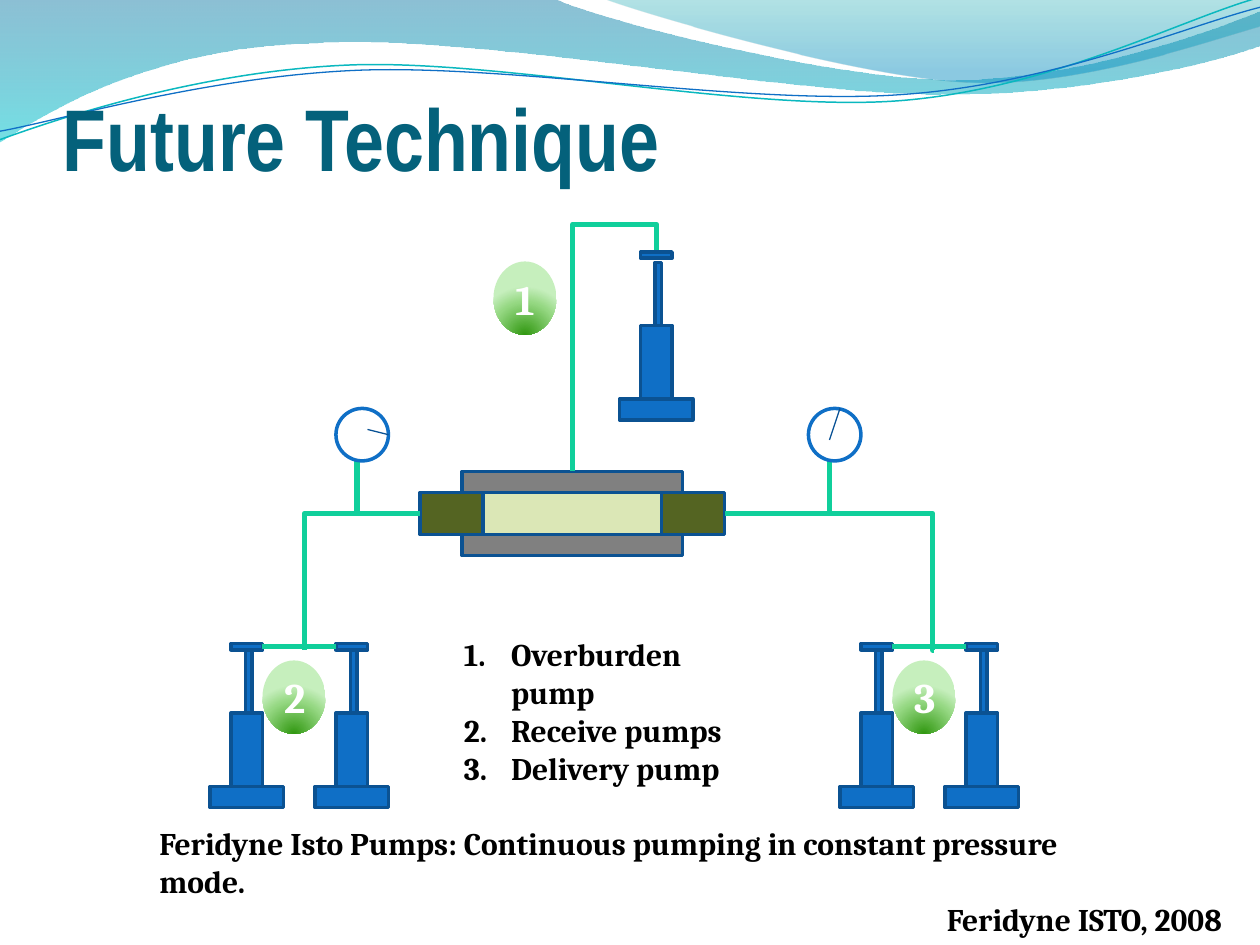
from dataclasses import dataclass
from typing import NamedTuple, Optional

from lxml.etree import SubElement
from pptx import Presentation
from pptx.dml.color import RGBColor
from pptx.enum.shapes import MSO_CONNECTOR as LineKind, MSO_SHAPE as Preset
from pptx.enum.text import MSO_ANCHOR as Anchor, MSO_AUTO_SIZE as AutoSize, PP_ALIGN as Align
from pptx.oxml.ns import qn
from pptx.util import Pt

PX = 7620  # EMU per px, 120 px to the inch
BLUE, NAVY, GREEN, WHITE = "0F6FC6", "0B5292", "10CF9B", "FFFFFF"
GREY, OLIVE, CORE = "808080", "546422", "DBE7B6"
BODY = {"name": "Cambria", "size": Pt(18), "bold": True}
HEADING = {"name": "Arial Narrow", "size": Pt(50), "bold": True}
BADGE = {"name": "Cambria", "size": Pt(24), "bold": True}


class Box(NamedTuple):
    left: int
    top: int
    width: int
    height: int

    def emu(self) -> list[int]:
        return [side * PX for side in self]


class Stop(NamedTuple):
    percent: int
    color: str
    alpha: int = 100


@dataclass
class Wave:
    start: tuple
    steps: list  # two numbers are a straight step, six a Bezier curve
    stops: Optional[list] = None
    line: Optional[tuple] = None


@dataclass
class Pump:
    left: int
    rod_top: int
    cap_gap: int = 0


@dataclass
class Elbow:
    box: Box
    preset: str
    turn: dict
    bend: Optional[int] = None


@dataclass
class Gauge:
    left: int
    tap: int
    needle: tuple


def rgb(color: str) -> RGBColor:
    return RGBColor.from_string(color)


def add(parent, tag: str, **attributes):
    return SubElement(parent, qn(tag), {key: str(value) for key, value in attributes.items()})


def set_line(shape, color: str, width: float) -> None:
    shape.line.color.rgb = rgb(color)
    shape.line.width = Pt(width)


def set_gradient(shape, stops: list[Stop], radial: bool = False) -> None:
    shape.fill.background()
    properties = shape._element.spPr
    gradient = add(properties, "a:gradFill", rotWithShape=1)
    properties.replace(properties.find(qn("a:noFill")), gradient)
    stop_list = add(gradient, "a:gsLst")
    for stop in stops:
        color = add(add(stop_list, "a:gs", pos=stop.percent * 1000), "a:srgbClr", val=stop.color)
        add(color, "a:alpha", val=stop.alpha * 1000)
    if radial:
        circle = add(gradient, "a:path", path="circle")
        add(circle, "a:fillToRect", l=50000, t=130000, r=50000, b=-30000)
    else:
        add(gradient, "a:lin", ang=5400000, scaled=1)


def draw_wave(shapes, wave: Wave) -> None:
    knots = [(step[n] * PX, step[n + 1] * PX) for step in wave.steps for n in range(0, len(step), 2)]
    builder = shapes.build_freeform(*(place * PX for place in wave.start), scale=1.0)
    builder.add_line_segments(knots, close=wave.stops is not None)
    shape = builder.convert_to_shape()

    # Join each three knots of a curved step into one Bezier segment
    outline = next(shape._element.iter(qn("a:path")))
    corners = iter(outline.findall(qn("a:lnTo")))
    for step in wave.steps:
        group = [next(corners) for _ in range(len(step) // 2)]
        if len(group) == 3:
            curve = add(outline, "a:cubicBezTo")
            group[0].addprevious(curve)
            for corner in group:
                curve.append(corner[0])
                outline.remove(corner)

    if wave.stops:
        set_gradient(shape, wave.stops)
        shape.line.fill.background()
    else:
        shape.fill.background()
        set_line(shape, *wave.line)
    shape.shadow.inherit = False


def draw_part(shapes, box: Box, fill: str, line: str = NAVY, preset=Preset.RECTANGLE) -> None:
    part = shapes.add_shape(preset, *box.emu())
    part.fill.solid()
    part.fill.fore_color.rgb = rgb(fill)
    set_line(part, line, 2)
    part.shadow.inherit = False


def draw_pump(shapes, pump: Pump) -> None:
    left, top = pump.left, pump.rod_top
    for box in (Box(left + 34, top, 6, 80), Box(left + 20, top + 60, 30, 70),
                Box(left, top + 130, 70, 20), Box(left + 20, top - 6 - pump.cap_gap, 30, 6)):
        draw_part(shapes, box, BLUE)


def draw_line(shapes, ends: tuple, color: str = GREEN, width: float = 3, kind=LineKind.STRAIGHT):
    line = shapes.add_connector(kind, *(end * PX for end in ends))
    set_line(line, color, width)
    add(line._element.spPr, "a:effectLst")
    return line


def draw_elbow(shapes, elbow: Elbow) -> None:
    left, top, width, height = elbow.box
    pipe = draw_line(shapes, (left, top, left + width, top + height), kind=LineKind.ELBOW)
    properties = pipe._element.spPr
    for key, value in elbow.turn.items():
        properties.find(qn("a:xfrm")).set(key, str(value))
    geometry = properties.find(qn("a:prstGeom"))
    geometry.set("prst", elbow.preset)
    if elbow.bend is not None:
        add(geometry.find(qn("a:avLst")), "a:gd", name="adj1", fmla=f"val {elbow.bend}")


def write(frame, lines: list[str], style: dict, color: str, **settings) -> None:
    for key, value in settings.items():
        setattr(frame, key, value)
    for index, line in enumerate(lines):
        paragraph = frame.paragraphs[0] if index == 0 else frame.add_paragraph()
        run = paragraph.add_run()
        run.text = line
        for key, value in style.items():
            setattr(run.font, key, value)
        run.font.color.rgb = rgb(color)


def draw_text(shapes, box: Box, lines: list[str], style: dict = BODY, color: str = "000000", **settings):
    frame = shapes.add_textbox(*box.emu()).text_frame
    write(frame, lines, style, color, **{"word_wrap": True, **settings})
    return frame


def draw_badge(shapes, number: int, left: int, top: int) -> None:
    badge = shapes.add_shape(Preset.OVAL, *Box(left, top, 60, 70).emu())
    set_gradient(badge, [Stop(0, "319811"), Stop(68, "95D882"), Stop(100, "C6EFBD")], radial=True)
    badge.line.fill.background()
    badge.shadow.inherit = False
    write(badge.text_frame, [str(number)], BADGE, WHITE, vertical_anchor=Anchor.MIDDLE)
    badge.text_frame.paragraphs[0].alignment = Align.CENTER


WAVES = [
    Wave((0, 0), [(528, -1), (571, 20, 797, 76, 910, 76), (1024, 76, 1150, 31, 1200, 11), (1201, 43),
                  (1180, 53, 1044, 91, 895, 90), (746, 90, 458, 34, 308, 41), (155, 43, 55, 100, -1, 136)],
         stops=[Stop(0, "0074A1", 45), Stop(100, "00C6CF", 55)]),
    Wave((575, -1), [(611, 13, 818, 74, 923, 78), (1027, 83, 1153, 38, 1200, 25), (1200, 0)],
         stops=[Stop(0, "00A1A9", 30), Stop(80, "008BBF", 45)]),
    Wave((0, 133), [(58, 112, 190, 68, 332, 62), (474, 56, 712, 107, 856, 96), (1000, 85, 1126, 18, 1198, -2)],
         line=("0AB8BF", 0.85)),
    Wave((0, 125), [(56, 115, 197, 73, 340, 67), (484, 61, 716, 101, 860, 90), (1003, 80, 1129, 25, 1200, 7)],
         line=(BLUE, 0.75)),
]
CORE_HOLDER = [
    (Box(440, 449, 210, 20), GREY), (Box(440, 509, 210, 20), GREY), (Box(400, 469, 60, 40), OLIVE),
    (Box(460, 469, 170, 40), CORE), (Box(630, 469, 60, 40), OLIVE),
]
PUMPS = [Pump(590, 250, cap_gap=4), *(Pump(left, 619) for left in (200, 300, 800, 900))]
ELBOWS = [
    Elbow(Box(290, 489, 110, 130), "bentConnector2", {"rot": 10800000, "flipV": 1}),
    Elbow(Box(483, 306, 205, 80), "bentConnector3", {"rot": 16200000, "flipH": 1, "flipV": 1}, -14600),
    Elbow(Box(690, 489, 200, 130), "bentConnector3", {}, 99100),
]
GAUGES = [Gauge(320, 340, (350, 409, 370, 414)), Gauge(770, 790, (790, 419, 800, 389))]


def main() -> None:
    deck = Presentation()
    deck.slide_width, deck.slide_height = 1200 * PX, 900 * PX
    shapes = deck.slides.add_slide(deck.slide_layouts[6]).shapes

    # Header waves and title
    for wave in WAVES:
        draw_wave(shapes, wave)
    draw_text(shapes, Box(60, 30, 1080, 150), ["Future Technique"], HEADING, "04617B",
              vertical_anchor=Anchor.BOTTOM, margin_left=0, margin_right=0, margin_bottom=0)

    # Core holder, pumps and pipes
    for box, fill in CORE_HOLDER:
        draw_part(shapes, box, fill)
    for elbow in ELBOWS:
        draw_elbow(shapes, elbow)
    for pump in PUMPS:
        draw_pump(shapes, pump)
    for left in (250, 850):
        draw_line(shapes, (left, 616, left + 70, 616))

    # Pressure gauges
    for gauge in GAUGES:
        draw_line(shapes, (gauge.tap, 489, gauge.tap, 439))
        draw_part(shapes, Box(gauge.left, 389, 50, 50), WHITE, BLUE, Preset.OVAL)
        draw_line(shapes, gauge.needle, "095295", 0.75)

    # Numbered badges and their key
    for number, (left, top) in enumerate([(470, 249), (250, 629), (850, 629)], start=1):
        draw_badge(shapes, number, left, top)
    key = draw_text(shapes, Box(430, 599, 310, 121), ["Overburden pump", "Receive pumps", "Delivery pump"])
    for paragraph in key.paragraphs:
        properties = paragraph._p.get_or_add_pPr()
        properties.set("marL", "342900")
        properties.set("indent", "-342900")
        add(properties, "a:buAutoNum", type="arabicPeriod")

    # Caption and credit
    draw_text(shapes, Box(140, 779, 900, 194),
              ["Feridyne Isto Pumps: Continuous pumping in constant pressure mode."])
    draw_text(shapes, Box(890, 851, 310, 48), ["Feridyne ISTO, 2008"],
              word_wrap=False, auto_size=AutoSize.SHAPE_TO_FIT_TEXT)

    deck.save("out.pptx")


if __name__ == "__main__":
    main()
